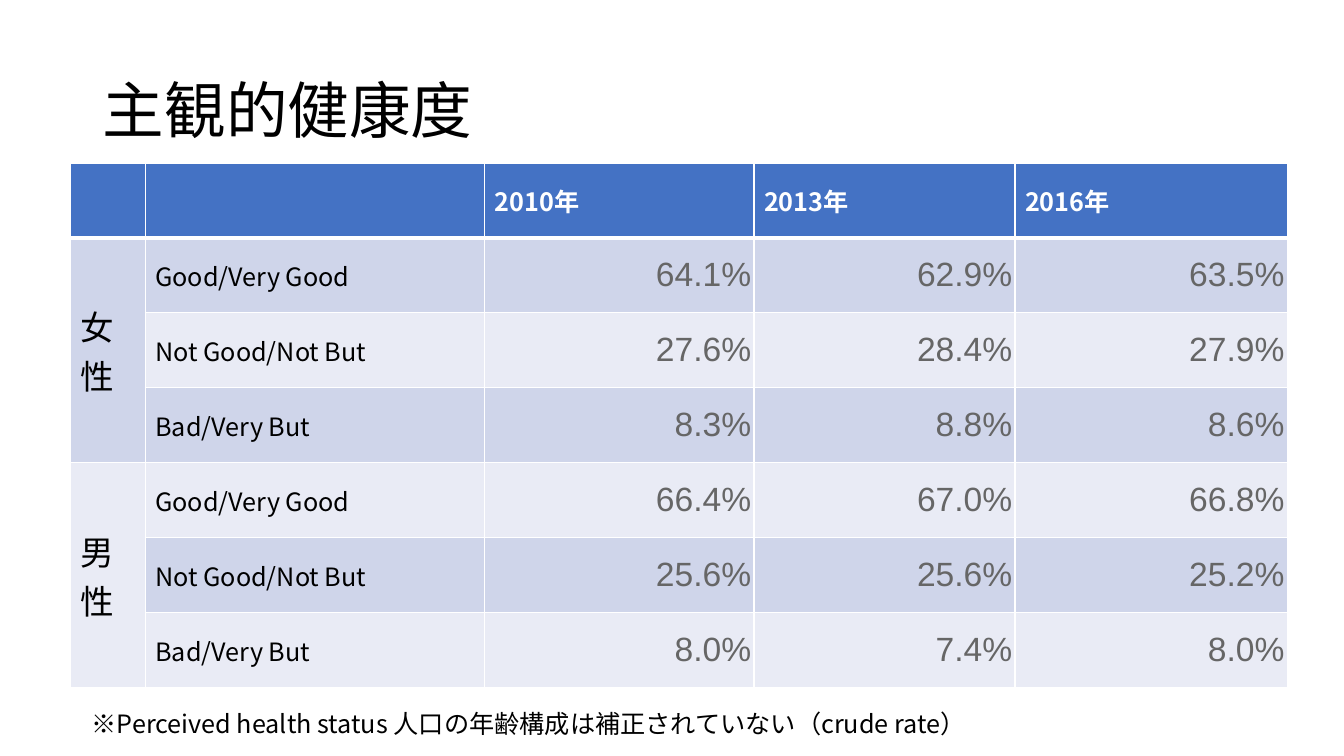
from lxml.etree import SubElement
from pptx import Presentation
from pptx.dml.color import RGBColor
from pptx.enum.text import MSO_ANCHOR, MSO_AUTO_SIZE, PP_ALIGN
from pptx.oxml.ns import qn
from pptx.util import Cm, Pt

BLACK = RGBColor(0x00, 0x00, 0x00)
WHITE = RGBColor(0xFF, 0xFF, 0xFF)
GRAY = RGBColor(0x66, 0x66, 0x66)
BLUE = RGBColor(0x44, 0x72, 0xC4)
BANDS = [RGBColor(0xCF, 0xD5, 0xEA), RGBColor(0xE9, 0xEB, 0xF5)]

YEARS = ["2010年", "2013年", "2016年"]
LEVELS = ["Good/Very Good", "Not Good/Not But", "Bad/Very But"]
RATES = {
    "女性": [["64.1%", "62.9%", "63.5%"],
           ["27.6%", "28.4%", "27.9%"],
           ["8.3%", "8.8%", "8.6%"]],
    "男性": [["66.4%", "67.0%", "66.8%"],
           ["25.6%", "25.6%", "25.2%"],
           ["8.0%", "7.4%", "8.0%"]],
}
COLS = [1.88, 8.56, 6.78, 6.58, 6.86]
HEAD, ROW = 1.88, 1.89


class Deck:
    """Holds the text style and the current slide."""

    font = "Noto Sans CJK JP"

    def __init__(self):
        self.deck = Presentation()
        self.deck.slide_width, self.deck.slide_height = Cm(33.87), Cm(19.05)
        self.slide = self.deck.slides.add_slide(self.deck.slide_layouts[5])

    def label(self, frame, text, size, color=BLACK, bold=False, font=None):
        frame.text = text
        for run in frame.paragraphs[0].runs:
            run.font.size, run.font.bold = Pt(size), bold
            run.font.color.rgb = color
            run.font.name = font or self.font
            east = SubElement(run._r.get_or_add_rPr(), qn("a:ea"))
            east.set("typeface", self.font)

    def title(self, text, left, top, width, height):
        box = self.slide.shapes.title
        box.left, box.top = Cm(left), Cm(top)
        box.width, box.height = Cm(width), Cm(height)
        self.label(box.text_frame, text, 44)
        box.text_frame.vertical_anchor = MSO_ANCHOR.MIDDLE
        line = box.text_frame.paragraphs[0]
        line.alignment, line.line_spacing = PP_ALIGN.LEFT, 0.9

    def note(self, text, left, top, width, height):
        box = self.slide.shapes.add_textbox(
            Cm(left), Cm(top), Cm(width), Cm(height))
        self.label(box.text_frame, text, 18)
        box.text_frame.word_wrap = True
        box.text_frame.auto_size = MSO_AUTO_SIZE.SHAPE_TO_FIT_TEXT

    def table(self, left, top, cols, rows):
        grid = self.slide.shapes.add_table(
            len(rows), len(cols), Cm(left), Cm(top),
            Cm(sum(cols)), Cm(sum(rows))).table
        for col, width in zip(grid.columns, cols):
            col.width = Cm(width)
        for row, height in zip(grid.rows, rows):
            row.height = Cm(height)
        return grid

    def cell(self, cell, fill, text="", size=18, base=1, **style):
        self.label(cell.text_frame, text, size, **style)
        cell.vertical_anchor = MSO_ANCHOR.MIDDLE
        # Borders come before the fill in the cell properties
        props = cell._tc.get_or_add_tcPr()
        for side in "LRTB":
            width = base if side == "B" else 1
            edge = SubElement(props, qn("a:ln" + side), w=str(Pt(width)))
            paint = SubElement(edge, qn("a:solidFill"))
            SubElement(paint, qn("a:srgbClr"), val=str(WHITE))
        cell.fill.solid()
        cell.fill.fore_color.rgb = fill

    def rate(self, cell, fill, text):
        self.cell(cell, fill, text, 24, color=GRAY, font="Arial")
        cell.text_frame.paragraphs[0].alignment = PP_ALIGN.RIGHT
        cell.margin_left = cell.margin_right = Cm(0.07)
        cell.margin_top = cell.margin_bottom = Cm(0.05)

    def group(self, grid, row, span, fill, text):
        for step in range(span):
            self.cell(grid.cell(row + step, 0), fill)
        head = grid.cell(row, 0)
        head.merge(grid.cell(row + span - 1, 0))
        self.label(head.text_frame, text, 24)
        head._tc.get_or_add_tcPr().set("vert", "eaVert")


def main():
    page = Deck()
    page.title("主観的健康度", 2.34, 1.02, 29.21, 3.68)

    # Table header
    count = len(LEVELS)
    grid = page.table(1.78, 4.11, COLS, [HEAD] + [ROW] * count * len(RATES))
    for col, text in enumerate(["", ""] + YEARS):
        page.cell(grid.cell(0, col), BLUE, text, base=3,
                  color=WHITE, bold=True)

    # Three levels for each sex, in alternating bands
    for part, (sex, block) in enumerate(RATES.items()):
        first = 1 + part * count
        page.group(grid, first, count, BANDS[part], sex)
        for row, (level, rates) in enumerate(zip(LEVELS, block), first):
            fill = BANDS[(row - 1) % 2]
            page.cell(grid.cell(row, 1), fill, level)
            for col, text in enumerate(rates, 2):
                page.rate(grid.cell(row, col), fill, text)

    # Footnote
    page.note("※Perceived health status 人口の年齢構成は補正されていない（crude rate）",
              2.06, 17.73, 26.85, 1.02)
    page.deck.save("out.pptx")


if __name__ == "__main__":
    main()
